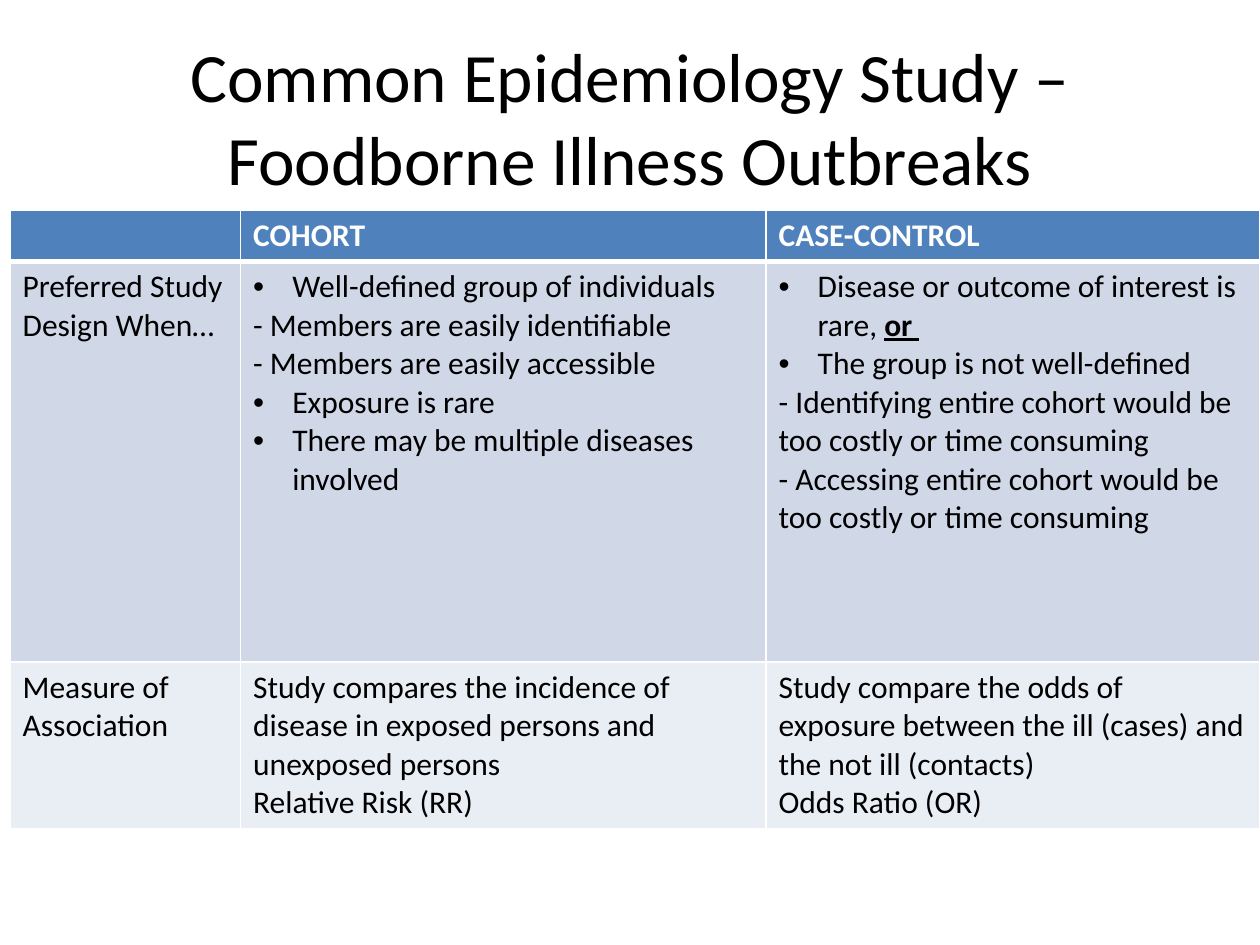
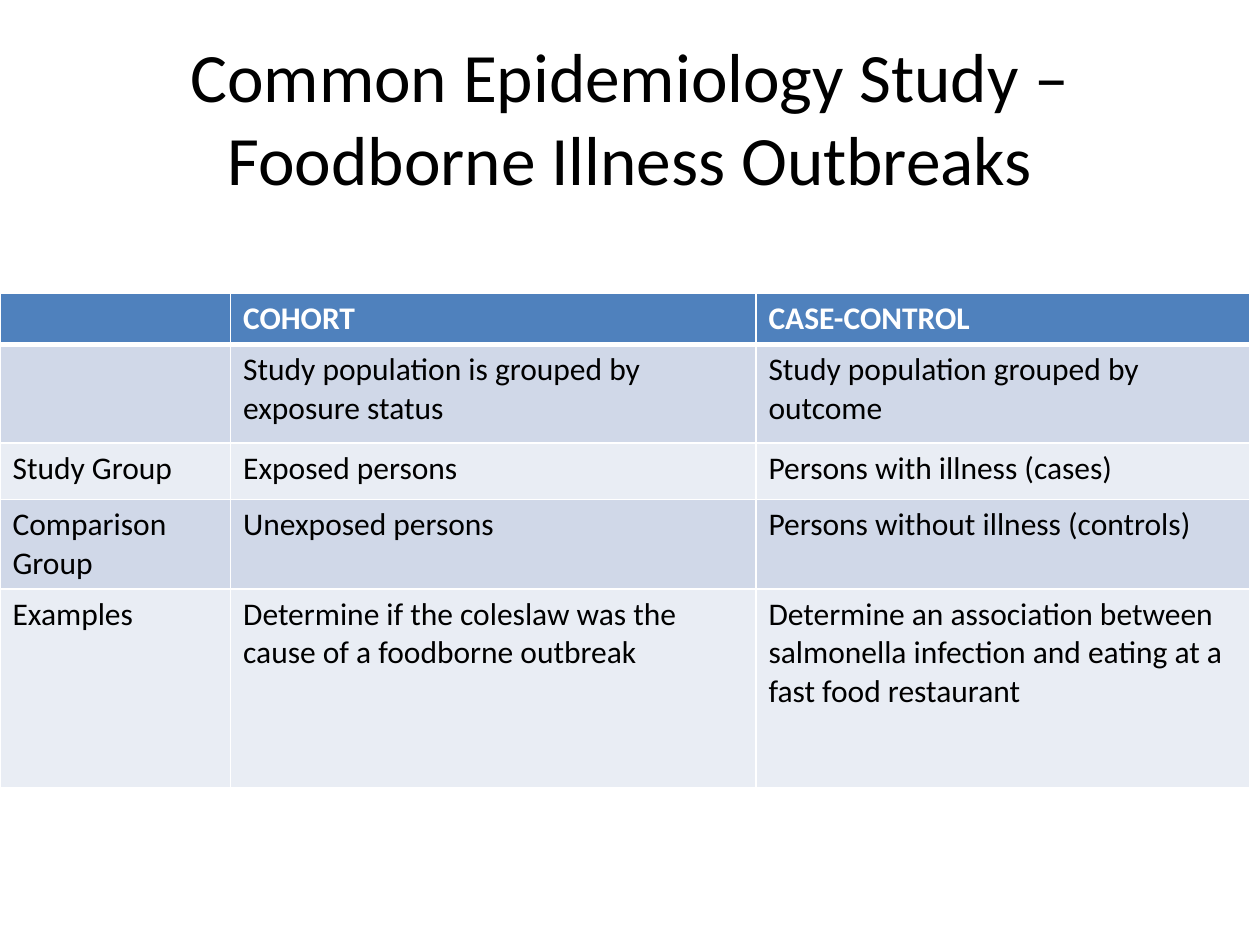
from lxml.etree import SubElement
from pptx import Presentation
from pptx.dml.color import RGBColor
from pptx.enum.text import MSO_ANCHOR, MSO_AUTO_SIZE, PP_ALIGN
from pptx.oxml import parse_xml
from pptx.oxml.ns import nsdecls, qn
from pptx.util import Inches, Pt

FONT = "Calibri"
BLACK, WHITE = "000000", "FFFFFF"
HEADER, BANDS = "4F81BD", ("D0D8E8", "E9EDF4")
TITLE = "Common Epidemiology Study – Foodborne Illness Outbreaks"
HEADINGS = ("", "COHORT", "CASE-CONTROL")
COLUMNS = (1.83, 4.17, 3.92)
BULLET = "• "

DESIGN_ROWS = [
    ("Preferred Study Design When…",
     "• Well-defined group of individuals\n"
     "- Members are easily identifiable\n"
     "- Members are easily accessible\n"
     "• Exposure is rare\n"
     "• There may be multiple diseases involved",
     "• Disease or outcome of interest is rare, *or *\n"
     "• The group is not well-defined\n"
     "- Identifying entire cohort would be too costly or time consuming\n"
     "- Accessing entire cohort would be too costly or time consuming"),
    ("Measure of Association",
     "Study compares the incidence of disease in exposed persons and unexposed persons\n"
     "Relative Risk (RR)",
     "Study compare the odds of exposure between the ill (cases) and the not ill (contacts)\n"
     "Odds Ratio (OR)"),
]
GROUP_ROWS = [
    ("", "Study population is grouped by exposure status",
     "Study population grouped by outcome"),
    ("Study Group", "Exposed persons", "Persons with illness (cases)"),
    ("Comparison Group", "Unexposed persons", "Persons without illness (controls)"),
    ("Examples", "Determine if the coleslaw was the cause of a foodborne outbreak",
     "Determine an association between salmonella infection and eating at a fast food restaurant"),
]


def rgb(color):
    return RGBColor.from_string(color)


def set_bullet(p, indent=0.31):
    pPr = p._p.get_or_add_pPr()
    pPr.set("marL", str(Inches(indent)))
    pPr.set("indent", str(-Inches(indent)))
    SubElement(pPr, qn("a:buFont"), typeface="Arial")
    SubElement(pPr, qn("a:buChar"), char=BULLET.strip())


def write(tf, text, size=18, color=BLACK, bold=False, align=PP_ALIGN.LEFT):
    for i, line in enumerate(text.split("\n")):
        p = tf.add_paragraph() if i else tf.paragraphs[0]
        p.alignment = align
        if line.startswith(BULLET):
            set_bullet(p)
        for j, part in enumerate(line.removeprefix(BULLET).split("*")):
            if not part:
                continue
            strong = j % 2 == 1
            r = p.add_run()
            r.text = part
            r.font.name, r.font.size = FONT, Pt(size)
            r.font.color.rgb = rgb(color)
            r.font.bold = bold or strong
            r.font.underline = strong


def set_borders(cell, top=1, bottom=1):
    tcPr = cell._tc.get_or_add_tcPr()
    widths = {"L": 1, "R": 1, "T": top, "B": bottom}
    for i, (side, width) in enumerate(widths.items()):
        tcPr.insert(i, parse_xml(
            f'<a:ln{side} {nsdecls("a")} w="{Pt(width)}"><a:solidFill>'
            f'<a:srgbClr val="{WHITE}"/></a:solidFill></a:ln{side}>'))


def add_title(s):
    sp = s.shapes.title
    sp.left, sp.top, sp.width, sp.height = map(Inches, (0.5, 0.3, 9, 1.25))
    tf = sp.text_frame
    tf.auto_size = MSO_AUTO_SIZE.NONE
    tf.vertical_anchor = MSO_ANCHOR.MIDDLE
    write(tf, TITLE, size=39.6, align=PP_ALIGN.CENTER)


def add_comparison(s, left, top, rows, heights):
    rows = [HEADINGS, *rows]
    table = s.shapes.add_table(
        len(rows), len(COLUMNS), Inches(left), Inches(top),
        Inches(sum(COLUMNS)), Inches(sum(heights))).table
    for column, width in zip(table.columns, COLUMNS):
        column.width = Inches(width)
    for i, (texts, height) in enumerate(zip(rows, heights)):
        table.rows[i].height = Inches(height)
        header = i == 0
        for j, text in enumerate(texts):
            cell = table.cell(i, j)
            cell.fill.solid()
            cell.fill.fore_color.rgb = rgb(HEADER if header else BANDS[(i - 1) % 2])
            set_borders(cell, top=3 if i == 1 else 1, bottom=3 if header else 1)
            write(cell.text_frame, text, color=WHITE if header else BLACK, bold=header)


def add_study_slide(prs, left, top, rows, heights):
    s = prs.slides.add_slide(prs.slide_layouts[5])
    add_title(s)
    add_comparison(s, left, top, rows, heights)


def main():
    prs = Presentation()
    prs.slide_width, prs.slide_height = Inches(10), Inches(7.5)
    add_study_slide(prs, 0.08, 1.67, DESIGN_ROWS, (0.4, 3.18, 1.3))
    add_study_slide(prs, 0, 2.33, GROUP_ROWS, (0.4, 0.78, 0.45, 0.7, 1.58))
    prs.save("out.pptx")


if __name__ == "__main__":
    main()
